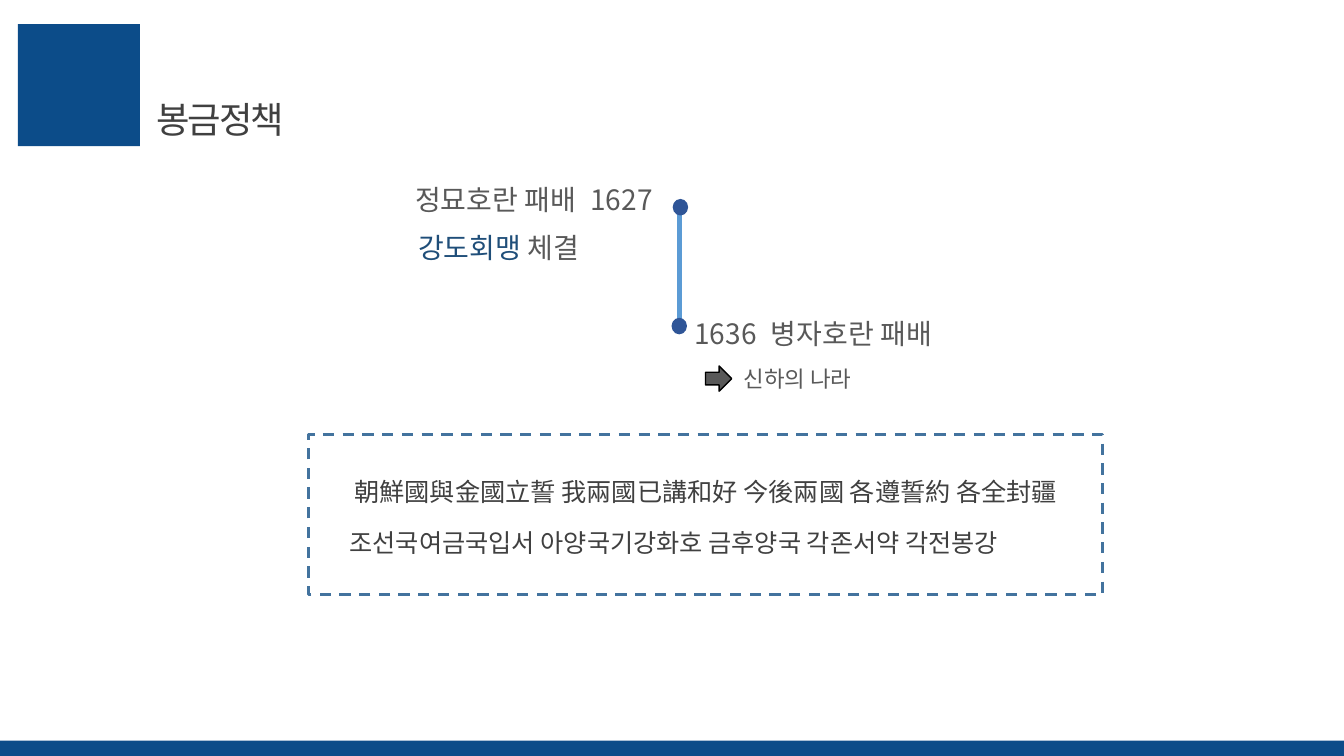
"""Build the slide on the border-closing policy with its two-event timeline."""
import pptx
import pptx.util
import pptx.dml.color
import pptx.enum.dml
import pptx.enum.shapes
import pptx.enum.text
import pptx.oxml.ns
import lxml.etree

Pt = pptx.util.Pt
Kind = pptx.enum.shapes.MSO_SHAPE
Align = pptx.enum.text.PP_ALIGN
FONT = "Noto Sans CJK KR"
BLUE, NAVY, DARK, GRAY = "0C4C89", "2F5597", "404040", "595959"


def write(text, box, size=20, color=GRAY, align=Align.LEFT, spacing=0, more=False):
    """Add one formatted span to a box, after its present text if more is set."""
    frame = box.text_frame
    frame.word_wrap = True
    frame.auto_size = pptx.enum.text.MSO_AUTO_SIZE.NONE
    frame.vertical_anchor = pptx.enum.text.MSO_ANCHOR.TOP
    para = frame.paragraphs[0]
    if not more:
        para.alignment = align
    span = para.add_run()
    span.text = text
    span.font.name, span.font.size = FONT, Pt(size)
    span.font.color.rgb = pptx.dml.color.RGBColor.from_string(color)
    props = span.font._element
    if spacing:
        props.set("spc", str(round(spacing * 100)))
    east_asian = lxml.etree.SubElement(props, pptx.oxml.ns.qn("a:ea"))
    east_asian.set("typeface", FONT)


def draw(kind, left, top, width, height, fill=None, line=None, weight=1):
    """Add a preset shape with the given fill and outline, and no shadow."""
    shape = page.shapes.add_shape(kind, Pt(left), Pt(top), Pt(width), Pt(height))
    shape.shadow.inherit = False
    for paint, color in ((shape.fill, fill), (shape.line.fill, line)):
        if color:
            paint.solid()
            paint.fore_color.rgb = pptx.dml.color.RGBColor.from_string(color)
        else:
            paint.background()
    if line:
        shape.line.width = Pt(weight)
    return shape


deck = pptx.Presentation()
deck.slide_width, deck.slide_height = Pt(960), Pt(540)
page = deck.slides.add_slide(deck.slide_layouts[5])

draw(Kind.RECTANGLE, 12.8, 17.3, 87.1, 87.1, fill=BLUE)
draw(Kind.RECTANGLE, 0, 529, 960, 11, fill=BLUE)

title = page.shapes.title
title.left, title.top, title.width, title.height = Pt(104.4), Pt(65.5), Pt(400), Pt(39)
write("봉금정책", title, size=26, color=DARK, spacing=-1.5)

timeline = page.shapes.add_connector(
    pptx.enum.shapes.MSO_CONNECTOR.STRAIGHT, Pt(485.3), Pt(147.6), Pt(485.3), Pt(236.2))
timeline.line.color.rgb = pptx.dml.color.RGBColor.from_string("5B9BD5")
timeline.line.width = Pt(3)
lxml.etree.SubElement(timeline._element.spPr, pptx.oxml.ns.qn("a:effectLst"))
for left, top in ((480.2, 227.5), (481, 142.6)):
    draw(Kind.OVAL, left, top, 10, 10.8, fill=NAVY, line=NAVY)

frame_box = draw(Kind.RECTANGLE, 220.3, 310.3, 567.4, 114.5, line="43739E", weight=2)
frame_box.line.dash_style = pptx.enum.dml.MSO_LINE.DASH
draw(Kind.RIGHT_ARROW, 504, 261.4, 18.7, 18, fill=GRAY, line="000000")

wide_gap = {"spacing": 5.7}
navy_text = {"color": "1F4E79"}
quote = {"size": 18, "color": DARK}
labels = [
    (289.4, 126.7, 200, 34, [("정묘호란 패배", {}), (" ", wide_gap), ("1627", {})]),
    (291.6, 161.3, 170, 32, [("강도회맹", navy_text), (" 체결", {})]),
    (488.9, 222.5, 192, 34, [("1636", {}), (" ", wide_gap), ("병자호란 패배", {})]),
    (524.2, 257, 167, 27, [("신하의 나라", {"size": 16})]),
    (213.1, 337, 582, 29,
     [("朝鮮國與金國立誓 我兩國已講和好 今後兩國 各遵誓約 各全封疆",
       {**quote, "align": Align.CENTER})]),
    (242.6, 373, 533, 29,
     [("조선국여금국입서 아양국기강화호 금후양국 각존서약 각전봉강", quote)]),
]
for left, top, width, height, spans in labels:
    box = page.shapes.add_textbox(Pt(left), Pt(top), Pt(width), Pt(height))
    for index, (text, style) in enumerate(spans):
        write(text, box, more=index > 0, **style)

deck.save("out.pptx")
